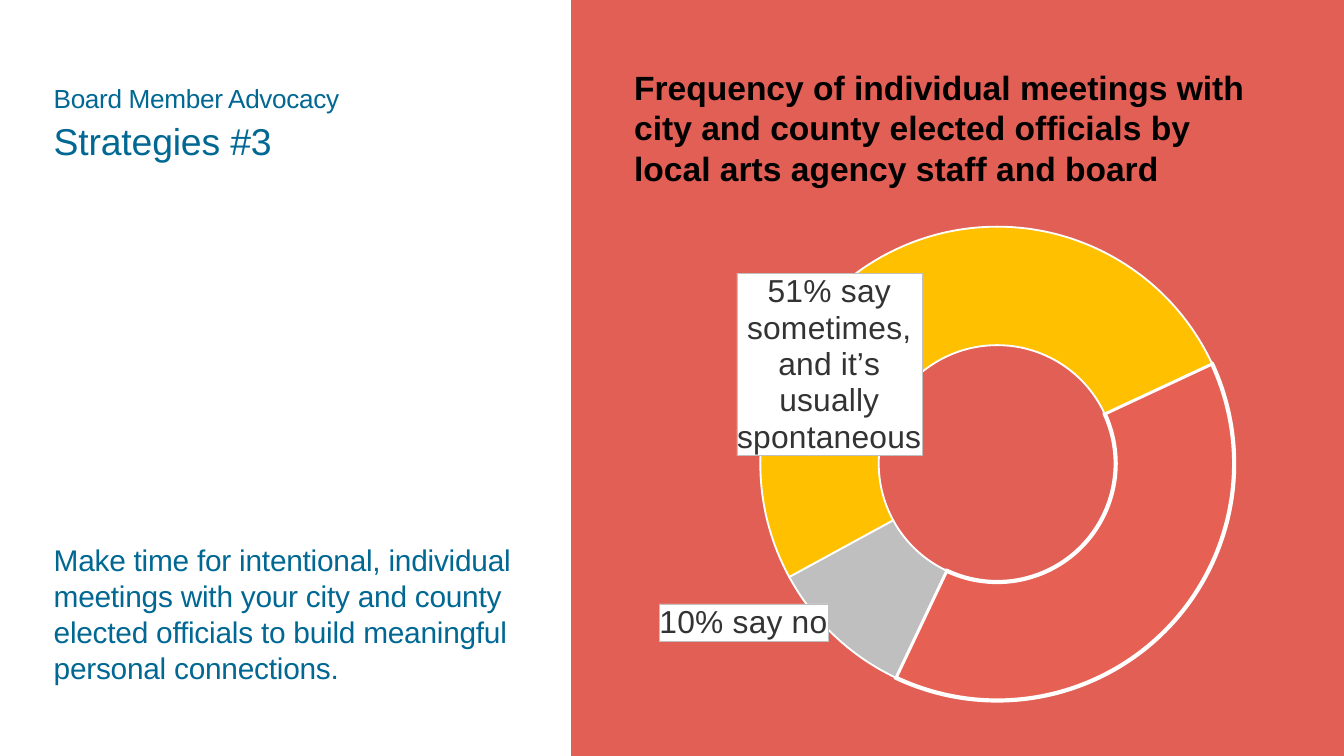
from dataclasses import dataclass

from lxml import etree
from pptx import Presentation
from pptx.chart.data import CategoryChartData
from pptx.dml.color import RGBColor
from pptx.enum.chart import XL_CHART_TYPE
from pptx.enum.shapes import MSO_SHAPE
from pptx.enum.text import MSO_ANCHOR
from pptx.oxml import parse_xml
from pptx.oxml.ns import nsdecls, qn
from pptx.util import Inches, Pt

DOUGHNUT = XL_CHART_TYPE.DOUGHNUT
RECTANGLE = MSO_SHAPE.RECTANGLE
TOP, BOTTOM = MSO_ANCHOR.TOP, MSO_ANCHOR.BOTTOM


@dataclass(frozen=True)
class Theme:
    blue: str = "006893"
    coral: str = "E15F55"
    slice_coral: str = "E66054"
    grey: str = "BFBFBF"
    gold: str = "FFC000"
    white: str = "FFFFFF"
    black: str = "000000"
    label_text: str = "333333"
    font: str = "Arial"
    chart_font: str = "Roboto Condensed"
    kicker_size: float = 14
    title_size: float = 20
    message_size: float = 16
    heading_size: float = 18
    label_size: float = 17
    chart_size: float = 8.6


def rgb(value):
    return RGBColor.from_string(value)


def manual_layout(x, y, w=None, h=None):
    layout = etree.Element(qn("c:layout"))
    manual = etree.SubElement(layout, qn("c:manualLayout"))
    values = {"x": x, "y": y}
    if w is not None:
        values = {"layoutTarget": "inner", "xMode": "edge", "yMode": "edge",
                  **values, "w": w, "h": h}
    for tag, value in values.items():
        etree.SubElement(manual, qn(f"c:{tag}")).set("val", str(value))
    return layout


class SlideBuilder:
    """Adds styled elements to the current slide."""

    def __init__(self, slide, theme):
        self.slide = slide
        self.theme = theme

    def panel(self, box, color):
        shape = self.slide.shapes.add_shape(RECTANGLE, *map(Inches, box))
        shape.shadow.inherit = False
        shape.fill.solid()
        shape.fill.fore_color.rgb = rgb(color)
        shape.line.fill.background()

    def text(self, box, words, size, color, bold=False, leading=None,
             tracking=0, anchor=TOP, inset=(0, 0), space_after=0):
        frame = self.slide.shapes.add_textbox(*map(Inches, box)).text_frame
        frame.word_wrap = True
        frame.vertical_anchor = anchor
        frame.margin_left = frame.margin_right = Inches(inset[0])
        frame.margin_top = frame.margin_bottom = Inches(inset[1])
        paragraph = frame.paragraphs[0]
        paragraph.text = words
        paragraph.space_after = Pt(space_after)
        if leading:
            paragraph.line_spacing = Pt(leading)
        font = paragraph.font
        font.name, font.size, font.bold = self.theme.font, Pt(size), bold
        font.color.rgb = rgb(color)
        if tracking:
            properties = paragraph._p.get_or_add_pPr().get_or_add_defRPr()
            properties.set("spc", str(round(tracking * 100)))

    def doughnut(self, box, plot_area, slices, start, hole):
        data = CategoryChartData()
        data.categories = [str(i + 1) for i in range(len(slices))]
        data.add_series("Series 1", [share for share, *_ in slices])
        chart = self.slide.shapes.add_chart(
            DOUGHNUT, *map(Inches, box), data).chart
        chart.has_title = chart.has_legend = False
        chart.font.name = self.theme.chart_font
        chart.font.size = Pt(self.theme.chart_size)
        chart.font.color.rgb = rgb(self.theme.black)
        area = chart._chartSpace.chart.plotArea
        for layout in area.findall(qn("c:layout")):
            area.remove(layout)
        area.insert(0, manual_layout(*plot_area))
        for tag, value in (("firstSliceAng", start), ("holeSize", hole)):
            area.find(f".//{qn('c:' + tag)}").set("val", str(value))
        series = chart.plots[0].series[0]
        series.data_labels.show_value = False
        for i, (_, color, outline, label, offset) in enumerate(slices):
            point = series.points[i]
            point.format.fill.solid()
            point.format.fill.fore_color.rgb = rgb(color)
            point.format.line.color.rgb = rgb(self.theme.white)
            point.format.line.width = Pt(outline)
            if label:
                self.callout(point, label, offset)

    def callout(self, point, words, offset):
        paragraph = point.data_label.text_frame.paragraphs[0]
        run = paragraph.add_run()
        run.text = words
        font = run.font
        font.name, font.size = self.theme.font, Pt(self.theme.label_size)
        font.color.rgb = rgb(self.theme.label_text)
        rich = paragraph._p.getparent().getparent()
        rich.addprevious(manual_layout(*offset))
        rich.addnext(parse_xml(
            f'<c:spPr {nsdecls("c", "a")}>'
            f'<a:solidFill><a:srgbClr val="{self.theme.white}"/></a:solidFill>'
            f'<a:ln w="3175"><a:solidFill><a:srgbClr val="{self.theme.grey}"/>'
            '</a:solidFill></a:ln></c:spPr>'))


def main():
    theme = Theme()
    deck = Presentation()
    deck.slide_width = Inches(10)
    deck.slide_height = deck.slide_width * 9 // 16
    page = SlideBuilder(deck.slides.add_slide(deck.slide_layouts[6]), theme)

    page.panel((4.25, -0.02, 5.75, 5.65), theme.coral)
    page.text((0.4, 0.52, 4.17, 0.27), "Board Member Advocacy",
              theme.kicker_size, theme.blue, leading=23.4, tracking=-0.2)
    page.text((0.4, 0.89, 4.17, 0.67), "Strategies #3",
              theme.title_size, theme.blue, leading=23.4, tracking=-0.1)
    page.text((0.4, 1.77, 3.43, 3.33),
              "Make time for intentional, individual meetings with your city "
              "and county elected officials to build meaningful personal "
              "connections.",
              theme.message_size, theme.blue, leading=19.2, tracking=-0.1,
              anchor=BOTTOM, space_after=6)
    page.text((4.62, 0.45, 4.93, 1.06),
              "Frequency of individual meetings with city and county elected "
              "officials by local arts agency staff and board",
              theme.heading_size, theme.black, bold=True, inset=(0.1, 0.05))
    page.doughnut(
        (2.98, 1.13, 6.53, 4.42), (0.41, 0.12, 0.54, 0.81),
        [(39, theme.slice_coral, 2.25, None, None),
         (10, theme.grey, 1, "10% say no", (-0.15, 0.05)),
         (51, theme.gold, 1,
          "51% say sometimes, and it’s usually spontaneous", (-0.1, 0.1))],
        start=65, hole=60)
    deck.save("out.pptx")


if __name__ == "__main__":
    main()
